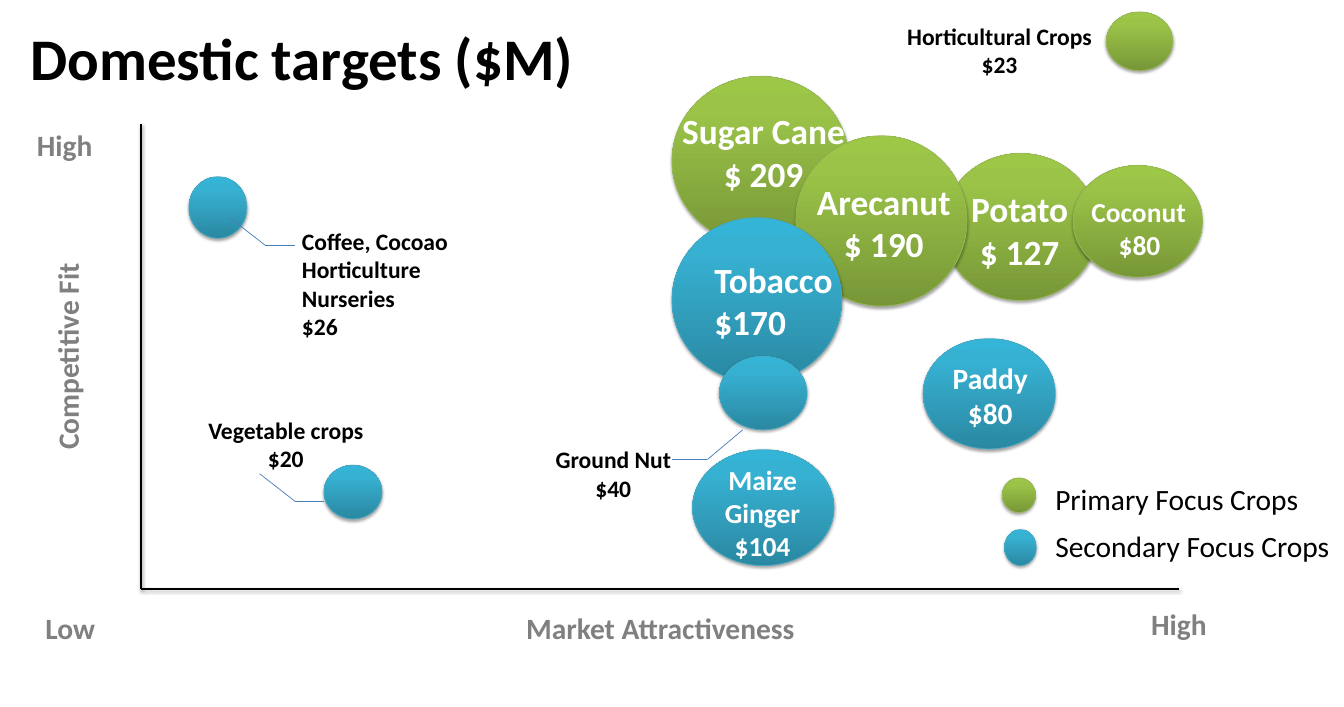
from dataclasses import dataclass
from itertools import pairwise

import pptx
import pptx.dml.color
import pptx.enum.shapes
import pptx.enum.text
import pptx.oxml
import pptx.oxml.ns
import pptx.util
from lxml import etree

Inches = pptx.util.Inches
Pt = pptx.util.Pt
LEFT = pptx.enum.text.PP_ALIGN.LEFT
CENTER = pptx.enum.text.PP_ALIGN.CENTER

BLACK, WHITE, GREY = "000000", "FFFFFF", "808080"
LEADER_BLUE = "4B7EBC"

Point = tuple[float, float]
Box = tuple[float, float, float, float]


@dataclass(frozen=True)
class Focus:
    """Gradient stops (position, colour) from bottom to top, and the outline."""
    stops: tuple[tuple[int, str], ...]
    outline: str


PRIMARY = Focus(((0, "779737"), (80, "9BC348"), (100, "9DC746")), "98B955")
SECONDARY = Focus(((0, "2A88A2"), (80, "37B1D2"), (100, "34B4D6")), "46AAC5")


@dataclass(frozen=True)
class Label:
    box: Box
    lines: tuple[str, ...]
    size: int
    color: str = BLACK
    bold: bool = True
    aligns: tuple = (CENTER,)  # the last one holds for the remaining lines
    vertical: bool = False


@dataclass(frozen=True)
class Crop:
    focus: Focus
    bubble: Box
    label: Label
    leader: tuple[Point, ...] = ()


TITLE = Label((0.33, 0.25, 14.5, 1.11), ("Domestic targets ($M)",), 60, aligns=(LEFT,))

ORIGIN, Y_AXIS_TOP, X_AXIS_END = (2, 8.33), (2, 1.75), (16.67, 8.33)

AXIS_LABELS = [
    Label((0, 1.75, 1.83, 0.61), ("High",), 30, GREY),
    Label((0.08, 8.58, 1.83, 0.61), ("Low",), 30, GREY),
    Label((15.75, 8.53, 1.83, 0.61), ("High",), 30, GREY),
    Label((0.65, 3.38, 0.71, 3.33), ("Competitive Fit",), 30, GREY, vertical=True),
    Label((4.17, 8.58, 10.33, 0.61), ("Market Attractiveness",), 30, GREY),
]

CROPS = [
    Crop(PRIMARY, (13.33, 2.17, 2.19, 2.08),
         Label((13.25, 2.6, 2.33, 1.31), ("Potato", "$ 127"), 36, WHITE)),
    Crop(PRIMARY, (9.5, 1.08, 2.5, 2.39),
         Label((9.42, 1.5, 2.75, 1.31), ("Sugar Cane", "$ 209"), 36, WHITE)),
    Crop(PRIMARY, (11.25, 1.92, 2.42, 2.41),
         Label((11.33, 2.5, 2.33, 1.31), ("Arecanut", "$ 190"), 36, WHITE)),
    Crop(SECONDARY, (9.5, 3.08, 2.4, 2.33),
         Label((10, 3.6, 1.92, 1.31), ("Tobacco", "$170"), 36, WHITE, aligns=(LEFT,))),
    Crop(PRIMARY, (15.17, 2.34, 1.83, 1.58),
         Label((15.33, 2.71, 1.56, 1.04), ("Coconut", "$80"), 28, WHITE,
               aligns=(LEFT, CENTER))),
    Crop(SECONDARY, (10.17, 5.04, 1.24, 1.04),
         Label((7.67, 6.25, 2, 0.91), ("Ground Nut", "$40"), 24),
         ((10.5, 6.08), (10, 6.5), (9.5, 6.5))),
    Crop(PRIMARY, (15.64, 0.17, 0.94, 0.83),
         Label((11.92, 0.26, 4.42, 0.91), ("Horticultural Crops", "$23"), 24)),
    Crop(SECONDARY, (9.79, 6.36, 2, 1.64),
         Label((9.89, 6.5, 1.78, 1.51), ("Maize", "Ginger", "$104"), 28, WHITE)),
    Crop(SECONDARY, (2.67, 2.5, 0.82, 0.87),
         Label((4.17, 3.16, 3, 1.72), ("Coffee, Cocoao", "Horticulture Nurseries", "$26"),
               24, aligns=(LEFT,)),
         ((3.25, 3.08), (3.75, 3.47), (4.17, 3.47))),
    Crop(SECONDARY, (4.58, 6.58, 0.82, 0.76),
         Label((1.83, 5.83, 4.42, 0.91), ("Vegetable crops", "$20"), 24),
         ((3.67, 6.7), (4.17, 7.09), (4.58, 7.09))),
    Crop(SECONDARY, (13.05, 4.79, 1.87, 1.56),
         Label((13.25, 5.04, 1.5, 1.11), ("Paddy", "$80"), 30, WHITE)),
    # Legend
    Crop(PRIMARY, (14.17, 6.76, 0.47, 0.49),
         Label((14.82, 6.76, 5.67, 0.61), ("Primary Focus Crops",), 30,
               bold=False, aligns=(LEFT,))),
    Crop(SECONDARY, (14.2, 7.49, 0.45, 0.51),
         Label((14.82, 7.42, 5.67, 0.61), ("Secondary Focus Crops",), 30,
               bold=False, aligns=(LEFT,))),
]


def rgb(color: str) -> pptx.dml.color.RGBColor:
    return pptx.dml.color.RGBColor.from_string(color)


def set_effects(shape, opacity: int = 0, distance: float = 0) -> None:
    """Give the shape a soft shadow straight below it, or none at zero opacity."""
    properties = shape._element.spPr
    for old in properties.findall(pptx.oxml.ns.qn("a:effectLst")):
        properties.remove(old)
    shadow = (
        f'<a:outerShdw blurRad="{Pt(3.1)}" dist="{Pt(distance)}" dir="5400000" rotWithShape="0">'
        f'<a:srgbClr val="{BLACK}"><a:alpha val="{opacity * 1000}"/></a:srgbClr></a:outerShdw>'
    ) if opacity else ""
    properties.append(pptx.oxml.parse_xml(
        f'<a:effectLst {pptx.oxml.ns.nsdecls("a")}>{shadow}</a:effectLst>'))


def draw_line(slide, start: Point, end: Point, color: str, width: float,
              shadow: int = 0) -> None:
    line = slide.shapes.add_connector(pptx.enum.shapes.MSO_CONNECTOR.STRAIGHT,
                                      *map(Inches, start + end))
    line.line.color.rgb = rgb(color)
    line.line.width = Pt(width)
    set_effects(line, shadow, 1.6)


def draw_label(slide, label: Label) -> None:
    frame = slide.shapes.add_textbox(*map(Inches, label.box)).text_frame
    frame.word_wrap = True
    frame.auto_size = pptx.enum.text.MSO_AUTO_SIZE.SHAPE_TO_FIT_TEXT
    if label.vertical:
        frame._txBody.bodyPr.set("vert", "vert270")
    frame.text = "\n".join(label.lines)
    for index, paragraph in enumerate(frame.paragraphs):
        paragraph.alignment = label.aligns[min(index, len(label.aligns) - 1)]
        font = paragraph.font
        font.name = "Calibri"
        font.size = Pt(label.size)
        font.bold = label.bold
        font.color.rgb = rgb(label.color)


def draw_bubble(slide, box: Box, focus: Focus) -> None:
    bubble = slide.shapes.add_shape(
        pptx.enum.shapes.MSO_SHAPE.FLOWCHART_CONNECTOR, *map(Inches, box))
    bubble.fill.gradient()
    bubble.fill.gradient_angle = 90
    stops = bubble._element.spPr.find(".//" + pptx.oxml.ns.qn("a:gsLst"))
    for old in list(stops):
        stops.remove(old)
    for position, color in focus.stops:
        stop = etree.SubElement(stops, pptx.oxml.ns.qn("a:gs"), pos=str(position * 1000))
        etree.SubElement(stop, pptx.oxml.ns.qn("a:srgbClr"), val=color)
    bubble.line.color.rgb = rgb(focus.outline)
    bubble.line.width = Pt(0.75)
    set_effects(bubble, 35, 1.8)


def draw_crop(slide, crop: Crop) -> None:
    draw_bubble(slide, crop.bubble, crop.focus)
    for start, end in pairwise(crop.leader):
        draw_line(slide, start, end, LEADER_BLUE, 0.75)
    draw_label(slide, crop.label)


def main() -> None:
    deck = pptx.Presentation()
    deck.slide_width, deck.slide_height = Inches(19), Inches(10)
    slide = deck.slides.add_slide(deck.slide_layouts[6])
    draw_label(slide, TITLE)
    draw_line(slide, Y_AXIS_TOP, ORIGIN, BLACK, 2, shadow=38)
    draw_line(slide, ORIGIN, X_AXIS_END, BLACK, 2, shadow=38)
    for label in AXIS_LABELS:
        draw_label(slide, label)
    for crop in CROPS:
        draw_crop(slide, crop)
    deck.save("out.pptx")


if __name__ == "__main__":
    main()
